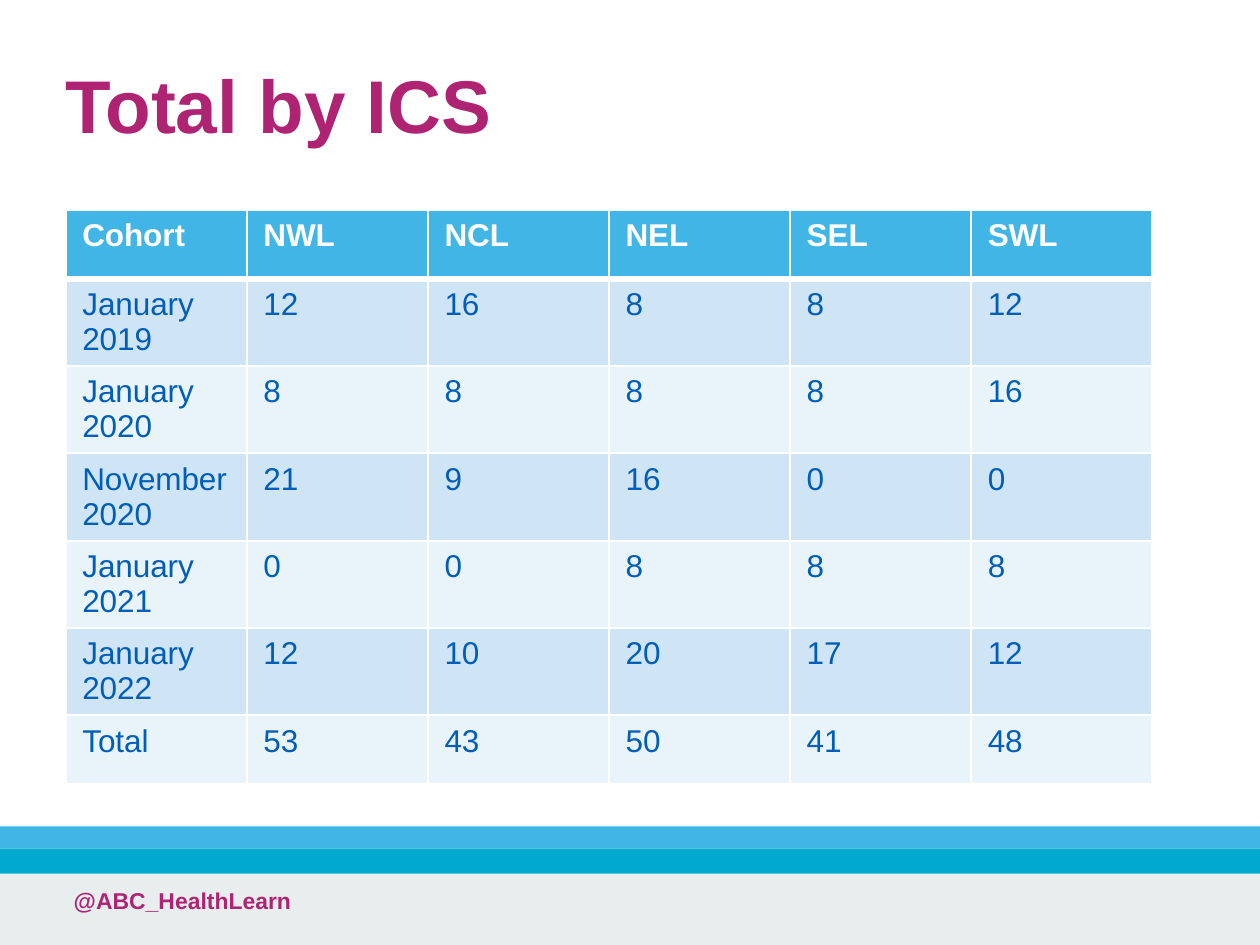
from lxml import etree
from pptx import Presentation
from pptx.dml.color import RGBColor
from pptx.enum.shapes import MSO_SHAPE
from pptx.enum.text import MSO_ANCHOR
from pptx.oxml.ns import qn
from pptx.util import Inches, Pt

SLIDE_WIDTH = 7.5
SLIDE_HEIGHT = SLIDE_WIDTH * 3 / 4
FONT = "Arial"
WHITE, PLUM, BLUE = "FFFFFF", "AE2473", "005EB8"
SKY, TEAL, GREY = "41B6E6", "00A9CE", "E8EDEE"
BANDS = ("CFE5F5", "E9F3FA")
COHORTS = [
    ("Cohort", "NWL", "NCL", "NEL", "SEL", "SWL"),
    ("January 2019", 12, 16, 8, 8, 12),
    ("January 2020", 8, 8, 8, 8, 16),
    ("November 2020", 21, 9, 16, 0, 0),
    ("January 2021", 0, 0, 8, 8, 8),
    ("January 2022", 12, 10, 20, 17, 12),
    ("Total", 53, 43, 50, 41, 48),
]


def color(hex_code):
    """Turn a hex string into a colour."""
    return RGBColor.from_string(hex_code)


def style(paragraph, size, hex_code, bold):
    """Set the font of a whole paragraph."""
    font = paragraph.font
    font.name, font.size, font.bold = FONT, Pt(size), bold
    font.color.rgb = color(hex_code)


def add_title(slide, left, top, width, height):
    """Place the slide heading."""
    frame = slide.shapes.add_textbox(Inches(left), Inches(top), Inches(width), Inches(height)).text_frame
    frame.word_wrap = True
    frame.vertical_anchor = MSO_ANCHOR.MIDDLE
    frame.margin_left = frame.margin_top = frame.margin_right = frame.margin_bottom = 0
    heading = frame.paragraphs[0]
    heading.text = "Total by ICS"
    heading.line_spacing = 0.9
    style(heading, 32, PLUM, True)


def add_cell_borders(cell, bottom_width):
    """Draw white borders around a cell."""
    properties = cell._tc.get_or_add_tcPr()
    widths = {"a:lnL": 1, "a:lnR": 1, "a:lnT": 1, "a:lnB": bottom_width}
    for position, (side, width) in enumerate(widths.items()):
        border = etree.Element(qn(side), w=str(Pt(width)))
        fill = etree.SubElement(border, qn("a:solidFill"))
        etree.SubElement(fill, qn("a:srgbClr"), val=WHITE)
        properties.insert(position, border)


def add_cohort_table(slide, left, top, width, height):
    """Place the banded table of cohort numbers, whose rows grow with their text."""
    table = slide.shapes.add_table(
        len(COHORTS), len(COHORTS[0]), Inches(left), Inches(top), Inches(width), Inches(height)
    ).table
    for row_number, values in enumerate(COHORTS):
        header = row_number == 0
        for column, value in enumerate(values):
            cell = table.cell(row_number, column)
            cell.margin_left, cell.margin_right = Inches(0.1), Inches(0.09)
            cell.margin_top, cell.margin_bottom = Inches(0.05), Inches(0.02)
            cell.fill.solid()
            cell.fill.fore_color.rgb = color(SKY if header else BANDS[(row_number - 1) % 2])
            cell.text = str(value)
            style(cell.text_frame.paragraphs[0], 13.5, WHITE if header else BLUE, header)
            add_cell_borders(cell, 3 if header else 1)


def add_footer(slide, left, top, width, height):
    """Place the two stripes and the grey strip with the handle."""
    teal_top, strip_top = 0.13, 0.28
    for offset, bottom, fill in (
        (strip_top, height, GREY),
        (0, teal_top, SKY),
        (teal_top, strip_top, TEAL),
    ):
        band = slide.shapes.add_shape(
            MSO_SHAPE.RECTANGLE, Inches(left), Inches(top + offset), Inches(width), Inches(bottom - offset)
        )
        band.shadow.inherit = False
        band.fill.solid()
        band.fill.fore_color.rgb = color(fill)
        band.line.fill.background()
    frame = slide.shapes.add_textbox(
        Inches(left + 0.34), Inches(top + strip_top + 0.03), Inches(4.38), Inches(0.39)
    ).text_frame
    frame.word_wrap = True
    handle = frame.paragraphs[0]
    handle.text = "@ABC_HealthLearn"
    style(handle, 9.8, PLUM, True)


def main():
    """Build and save the slide."""
    presentation = Presentation()
    presentation.slide_width = Inches(SLIDE_WIDTH)
    presentation.slide_height = Inches(SLIDE_HEIGHT)
    slide = presentation.slides.add_slide(presentation.slide_layouts[6])
    footer_top = 4.92
    add_footer(slide, 0, footer_top, SLIDE_WIDTH, SLIDE_HEIGHT - footer_top)
    add_title(slide, 0.39, 0.39, 6.47, 0.52)
    add_cohort_table(slide, 0.39, 1.25, 6.47, 2.87)
    presentation.save("out.pptx")


if __name__ == "__main__":
    main()
